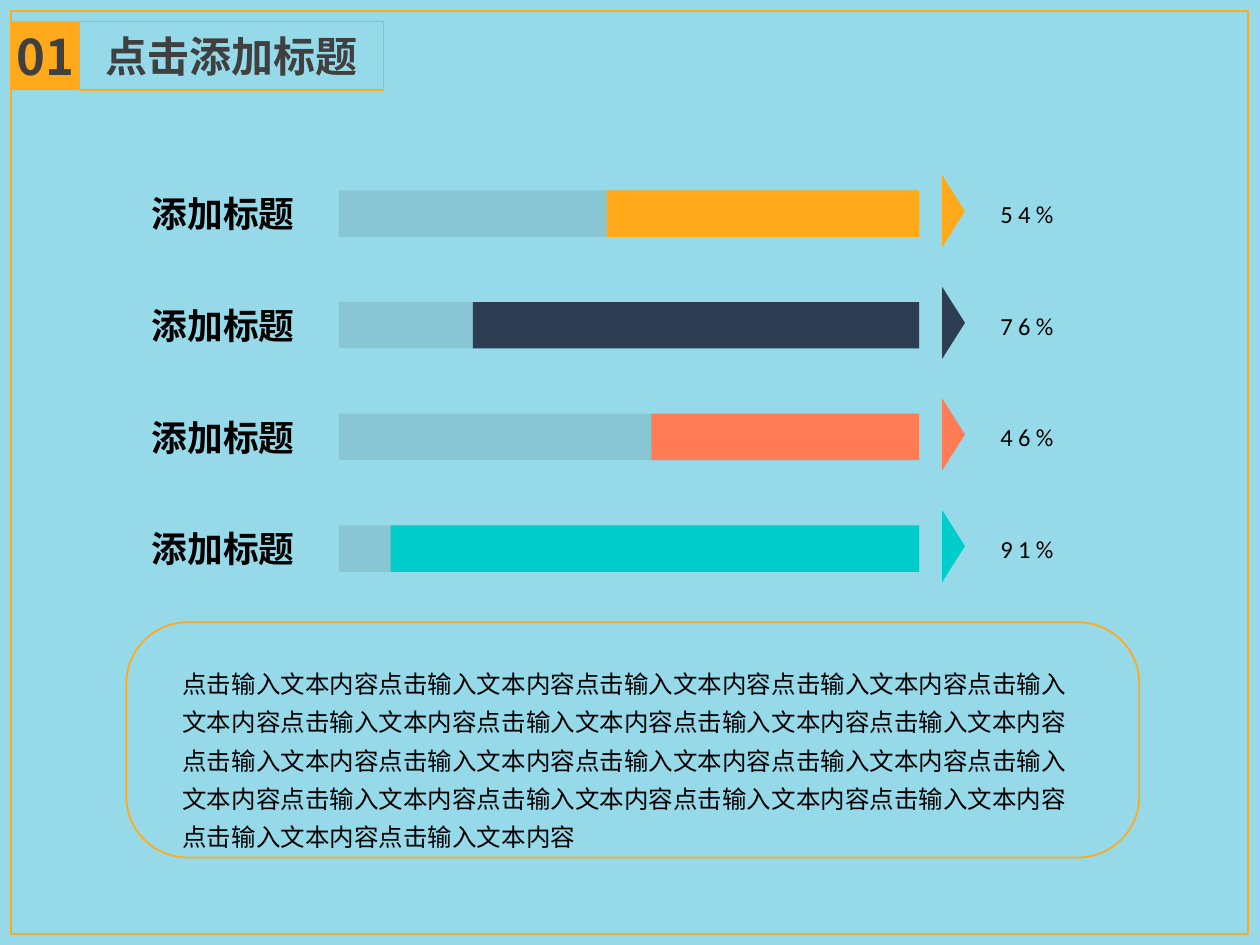
from lxml import etree
from pptx import Presentation
from pptx.dml.color import RGBColor
from pptx.enum.shapes import MSO_CONNECTOR, MSO_SHAPE
from pptx.enum.text import MSO_ANCHOR, MSO_AUTO_SIZE, PP_ALIGN
from pptx.oxml.ns import qn
from pptx.util import Pt

RECT, ROUND = MSO_SHAPE.RECTANGLE, MSO_SHAPE.ROUNDED_RECTANGLE
LINE = MSO_CONNECTOR.STRAIGHT
TOP, MIDDLE = MSO_ANCHOR.TOP, MSO_ANCHOR.MIDDLE
LEFT, CENTER = PP_ALIGN.LEFT, PP_ALIGN.CENTER
FIXED = MSO_AUTO_SIZE.NONE

SANS, LATIN = "Noto Sans CJK SC", "Calibri"
ORANGE, GRAY, BLACK = "FFA91B", "404040", "000000"
BAR_X, BAR_Y, BAR_W, BAR_H, STEP = 193.6, 108.8, 331.6, 26.6, 63.8
ROWS = [
    ("54%", 178.6, ORANGE),
    ("76%", 255, "2E3E52"),
    ("46%", 153, "FF7C55"),
    ("91%", 302, "00CCCC"),
]


def color(code):
    """Turn a hex string into a colour."""
    return RGBColor.from_string(code)


def paint(shape, fill=None, line=None, weight=1, alpha=None):
    """Set the fill, outline and opacity of a shape."""
    if fill:
        shape.fill.solid()
        shape.fill.fore_color.rgb = color(fill)
    else:
        shape.fill.background()
    if alpha:
        tone = shape.fill._xPr.find(".//" + qn("a:srgbClr"))
        etree.SubElement(tone, qn("a:alpha"), val=str(alpha * 1000))
    if line:
        shape.line.color.rgb = color(line)
        shape.line.width = Pt(weight)
    else:
        shape.line.fill.background()


def block(slide, x, y, w, h, kind=RECT, **look):
    """Add a preset shape without shadow."""
    shape = slide.shapes.add_shape(kind, Pt(x), Pt(y), Pt(w), Pt(h))
    shape.shadow.inherit = False
    paint(shape, **look)
    return shape


def write(shape, text, size=14, font=SANS, ink=BLACK, bold=False,
          align=LEFT, anchor=MIDDLE, track=0, space=1, inset=None):
    """Put formatted text into a shape."""
    frame = shape.text_frame
    frame.word_wrap = True
    frame.auto_size = FIXED
    frame.vertical_anchor = anchor
    if inset is not None:
        frame.margin_left = frame.margin_right = Pt(inset)
        frame.margin_top = frame.margin_bottom = Pt(inset)
    para = frame.paragraphs[0]
    para.alignment, para.line_spacing = align, space
    run = para.add_run()
    run.text = text
    run.font.size, run.font.bold = Pt(size), bold
    run.font.name = font
    run.font.color.rgb = color(ink)
    props = run.font._element
    etree.SubElement(props, qn("a:ea"), typeface=font)
    if track:
        props.set("spc", str(track * 100))


def label(slide, x, y, w, h, text, **style):
    """Add a text box."""
    box = slide.shapes.add_textbox(Pt(x), Pt(y), Pt(w), Pt(h))
    write(box, text, **style)


def arrow(slide, x, y, w, h, fill):
    """Add a triangle that points right."""
    pen = slide.shapes.build_freeform(Pt(x), Pt(y))
    pen.add_line_segments([(Pt(x + w), Pt(y + h / 2)), (Pt(x), Pt(y + h))])
    shape = pen.convert_to_shape()
    shape.shadow.inherit = False
    paint(shape, fill=fill)


def rule(slide, x, y, w):
    """Add a level orange line."""
    line = slide.shapes.add_connector(LINE, Pt(x), Pt(y), Pt(x + w), Pt(y))
    line.line.color.rgb = color(ORANGE)
    line.line.width = Pt(1)
    etree.SubElement(line._element.spPr, qn("a:effectLst"))


def header(slide):
    """Build the frame, the number and the title."""
    block(slide, 6.2, 6.4, 707.2, 527.2, line=ORANGE)
    number = block(slide, 6.2, 12.2, 39.4, 39.4, fill=ORANGE)
    write(number, "01", size=28, ink=GRAY, bold=True, align=CENTER, inset=0)
    title = slide.shapes.title
    title.left, title.top = Pt(45.2), Pt(12.2)
    title.width, title.height = Pt(174.2), Pt(39.4)
    paint(title, line="84BFCF", weight=0.5)
    write(title, "点击添加标题", size=24, ink=GRAY, bold=True, align=CENTER)
    rule(slide, 45.2, 51.6, 174.2)


def row(slide, y, value, width, fill):
    """Build one bar with its label, arrow and value."""
    label(slide, 79.6, y, 104.6, BAR_H, "添加标题", size=20.4, bold=True)
    block(slide, BAR_X, y, BAR_W, BAR_H, fill=BLACK, alpha=9)
    block(slide, BAR_X + BAR_W - width, y, width, BAR_H, fill=fill)
    arrow(slide, 538.4, y - 8.6, 13, 41, fill)
    label(slide, 564.6, y, 105.8, BAR_H, value, font=LATIN, track=3)


def note(slide):
    """Build the rounded frame and its body text."""
    frame = block(slide, 72.2, 355.6, 578.8, 134.4, kind=ROUND, line=ORANGE)
    frame.adjustments[0] = 0.26
    label(slide, 97.2, 373.8, 528.6, 117.2, "点击输入文本内容" * 20,
          anchor=TOP, space=1.3)


def main():
    """Build and save the slide."""
    deck = Presentation()
    deck.slide_width, deck.slide_height = Pt(720), Pt(540)
    slide = deck.slides.add_slide(deck.slide_layouts[5])
    back = slide.background.fill
    back.solid()
    back.fore_color.rgb = color("96DAEA")
    header(slide)
    for i, data in enumerate(ROWS):
        row(slide, BAR_Y + i * STEP, *data)
    note(slide)
    deck.save("out.pptx")


if __name__ == "__main__":
    main()
